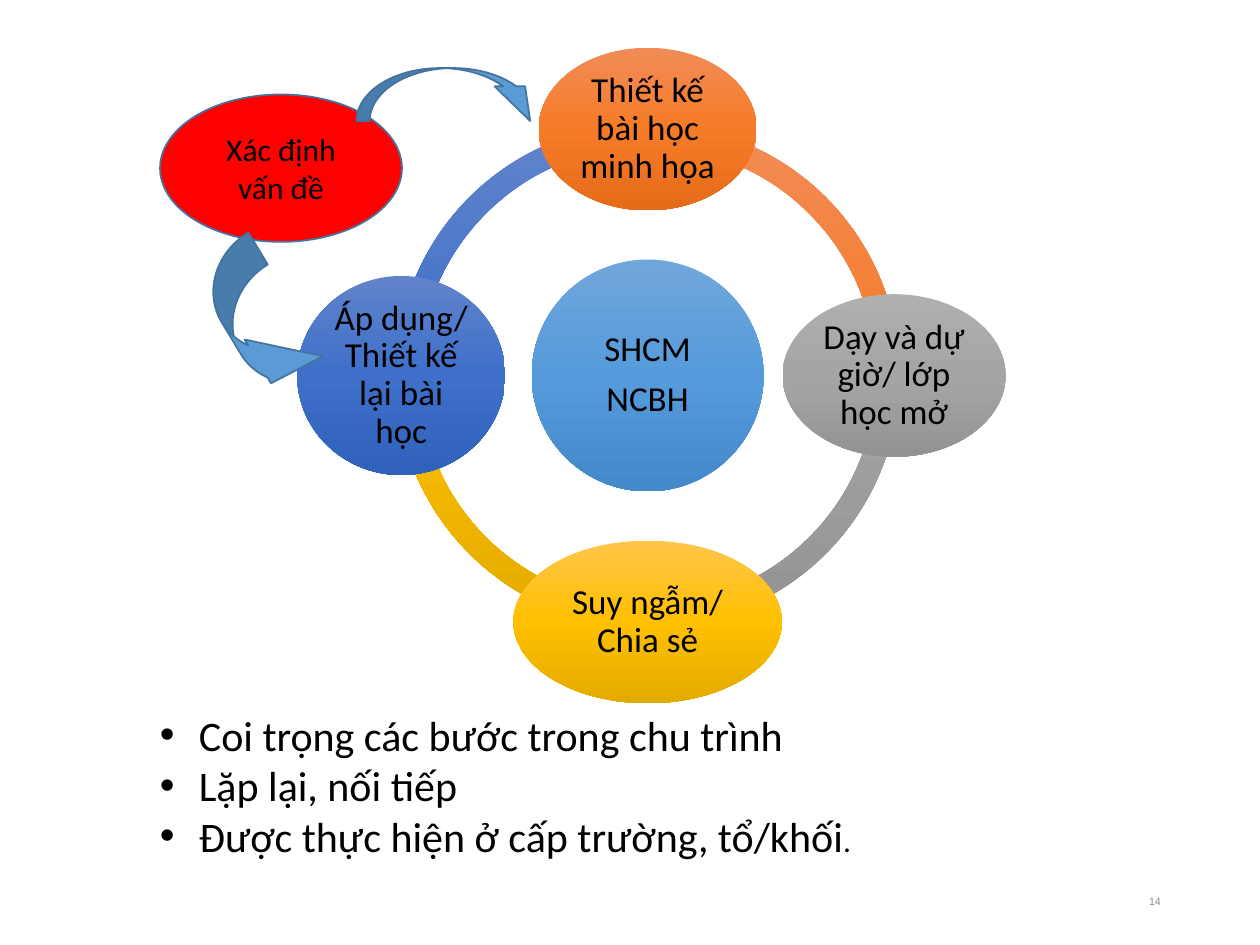
from copy import deepcopy
from math import cos, radians, sin

from lxml.etree import SubElement
from pptx import Presentation
from pptx.dml.color import RGBColor
from pptx.enum.shapes import MSO_SHAPE as Shape
from pptx.enum.text import MSO_ANCHOR as Anchor, MSO_AUTO_SIZE as AutoSize, PP_ALIGN as Align
from pptx.oxml.ns import qn
from pptx.util import Inches, Pt

BLACK = RGBColor(0x00, 0x00, 0x00)
RED = RGBColor(0xFF, 0x00, 0x00)
ARROW_BLUE = RGBColor(0x5B, 0x9B, 0xD5)
OUTLINE_BLUE = RGBColor(0x43, 0x73, 0x9E)
PAGE_GRAY = RGBColor(0x89, 0x89, 0x89)


def gradient(*codes):
    return [RGBColor.from_string(code) for code in codes]


SKY = gradient("71A6DB", "559BDB", "448ACA")
ORANGE = gradient("F18C57", "F67B28", "E56C19")
GRAY = gradient("AFAFAF", "A5A5A5", "939393")
GOLD = gradient("FFC64B", "FFC000", "E3AB00")
BLUE = gradient("6183CB", "3E70CA", "3062BB")

# Text, width, height, direction from the centre (degrees clockwise from the right),
# colours, and start and end of the arc that leads to the next step
STEPS = [
    ("Thiết kế bài học minh họa", 1.73, 1.29, 270, ORANGE, 162, 0),
    ("Dạy và dự giờ/ lớp học mở", 1.77, 1.29, 0, GRAY, 0, 54),
    ("Suy ngẫm/ Chia sẻ", 2.13, 1.29, 90, GOLD, 54, 108),
    ("Áp dụng/ Thiết kế lại bài học", 1.65, 1.58, 180, BLUE, 108, 162),
]
CONCLUSIONS = [
    ["Coi trọng các bước trong chu trình"],
    ["Lặp lại, nối tiếp"],
    ["Được thực hiện ở cấp trường, tổ/khối", "."],
]


def set_font(run, size, color=BLACK, name="Calibri"):
    run.font.size = Pt(size)
    run.font.name = name
    run.font.color.rgb = color


def add_flat_shape(slide, kind, left, top, width, height):
    shape = slide.shapes.add_shape(
        kind, Inches(left), Inches(top), Inches(width), Inches(height))
    shape.shadow.inherit = False
    return shape


def fill_gradient(shape, colors):
    """Fill from top to bottom with three evenly spaced colours and no outline."""
    shape.line.fill.background()
    shape.fill.gradient()
    shape.fill.gradient_angle = 270
    stop_list = shape._element.spPr.find(".//" + qn("a:gsLst"))
    stop_list.append(deepcopy(stop_list[0]))
    for stop, position, color in zip(shape.fill.gradient_stops, (0, 0.5, 1), colors):
        stop.position = position
        stop.color.rgb = color


def fill_outlined(shape, color):
    shape.fill.solid()
    shape.fill.fore_color.rgb = color
    shape.line.color.rgb = OUTLINE_BLUE
    shape.line.width = Pt(1)


def add_node(slide, center_x, center_y, width, height, text, colors):
    node = add_flat_shape(slide, Shape.OVAL, center_x - width / 2,
                          center_y - height / 2, width, height)
    fill_gradient(node, colors)
    frame = node.text_frame
    frame.text = text
    frame.word_wrap = True
    frame.vertical_anchor = Anchor.MIDDLE
    frame.margin_left = frame.margin_right = Inches(0.03)
    frame.margin_top = frame.margin_bottom = Inches(0.03)
    for paragraph in frame.paragraphs:
        paragraph.alignment = Align.CENTER
        paragraph.line_spacing = 0.9
        paragraph.space_after = Pt(7)
        set_font(paragraph.runs[0], 20)


def add_cycle(slide, left, top, size):
    """Draw the ring of steps around the hub; the box is that of the ring."""
    center_x, center_y = left + size / 2, top + size / 2
    radius = size * 0.489
    for *_, colors, start, end in reversed(STEPS):
        arc = add_flat_shape(slide, Shape.BLOCK_ARC, left, top, size, size)
        for index, value in enumerate((start, end, 0.046)):
            arc.adjustments[index] = value
        fill_gradient(arc, colors)
    add_node(slide, center_x, center_y, 1.84, 1.84, "SHCM\nNCBH", SKY)
    for text, width, height, direction, colors, *_ in STEPS:
        angle = radians(direction)
        add_node(slide, center_x + radius * cos(angle), center_y + radius * sin(angle),
                 width, height, text, colors)


def add_arrow(slide, kind, left, top, width, height, adjustments, rotation=0):
    arrow = add_flat_shape(slide, kind, left, top, width, height)
    for index, value in enumerate(adjustments):
        arrow.adjustments[index] = value
    arrow.rotation = rotation
    fill_outlined(arrow, ARROW_BLUE)


def add_starting_point(slide, left, top, width, height):
    """Draw the problem oval and its two arrows into the cycle."""
    problem = add_flat_shape(slide, Shape.OVAL, left, top, width, height)
    fill_outlined(problem, RED)
    frame = problem.text_frame
    frame.text = "Xác định vấn đề"
    frame.word_wrap = True
    frame.vertical_anchor = Anchor.MIDDLE
    frame.paragraphs[0].alignment = Align.CENTER
    set_font(frame.paragraphs[0].runs[0], 18)
    add_arrow(slide, Shape.CURVED_DOWN_ARROW, left + 1.56, top - 0.21, 1.5, 0.42,
              (0.25, 0.578, 0.654))
    add_arrow(slide, Shape.CURVED_RIGHT_ARROW, left + 0.54, top + 1.14, 0.55, 1.35,
              (0.541, 0.738, 0.845), 328.9)


def add_bullet(paragraph):
    properties = paragraph._p.get_or_add_pPr()
    properties.set("marL", str(Inches(0.31)))
    properties.set("indent", str(-Inches(0.31)))
    SubElement(properties, qn("a:buFont")).set("typeface", "Arial")
    SubElement(properties, qn("a:buChar")).set("char", "•")


def add_conclusions(slide, left, top, width, height):
    box = slide.shapes.add_textbox(Inches(left), Inches(top), Inches(width), Inches(height))
    frame = box.text_frame
    frame.word_wrap = True
    frame.auto_size = AutoSize.SHAPE_TO_FIT_TEXT
    for index, parts in enumerate(CONCLUSIONS):
        paragraph = frame.add_paragraph() if index else frame.paragraphs[0]
        add_bullet(paragraph)
        for part, size in zip(parts, (24, 18)):
            run = paragraph.add_run()
            run.text = part
            set_font(run, size)


def add_page_number(slide, left, top, width, height):
    box = slide.shapes.add_textbox(Inches(left), Inches(top), Inches(width), Inches(height))
    frame = box.text_frame
    frame.text = "14"
    frame.word_wrap = True
    frame.vertical_anchor = Anchor.MIDDLE
    frame.paragraphs[0].alignment = Align.RIGHT
    set_font(frame.paragraphs[0].runs[0], 6, PAGE_GRAY, "Arial")


def main():
    deck = Presentation()
    deck.slide_width, deck.slide_height = Inches(10), Inches(7.5)
    slide = deck.slides.add_slide(deck.slide_layouts[6])
    add_page_number(slide, 7.06, 6.95, 2.25, 0.4)
    add_cycle(slide, 3.14, 0.98, 4)
    add_starting_point(slide, 1.27, 0.75, 1.92, 1.17)
    add_conclusions(slide, 1.17, 5.58, 7.92, 1.31)
    deck.save("out.pptx")


if __name__ == "__main__":
    main()
